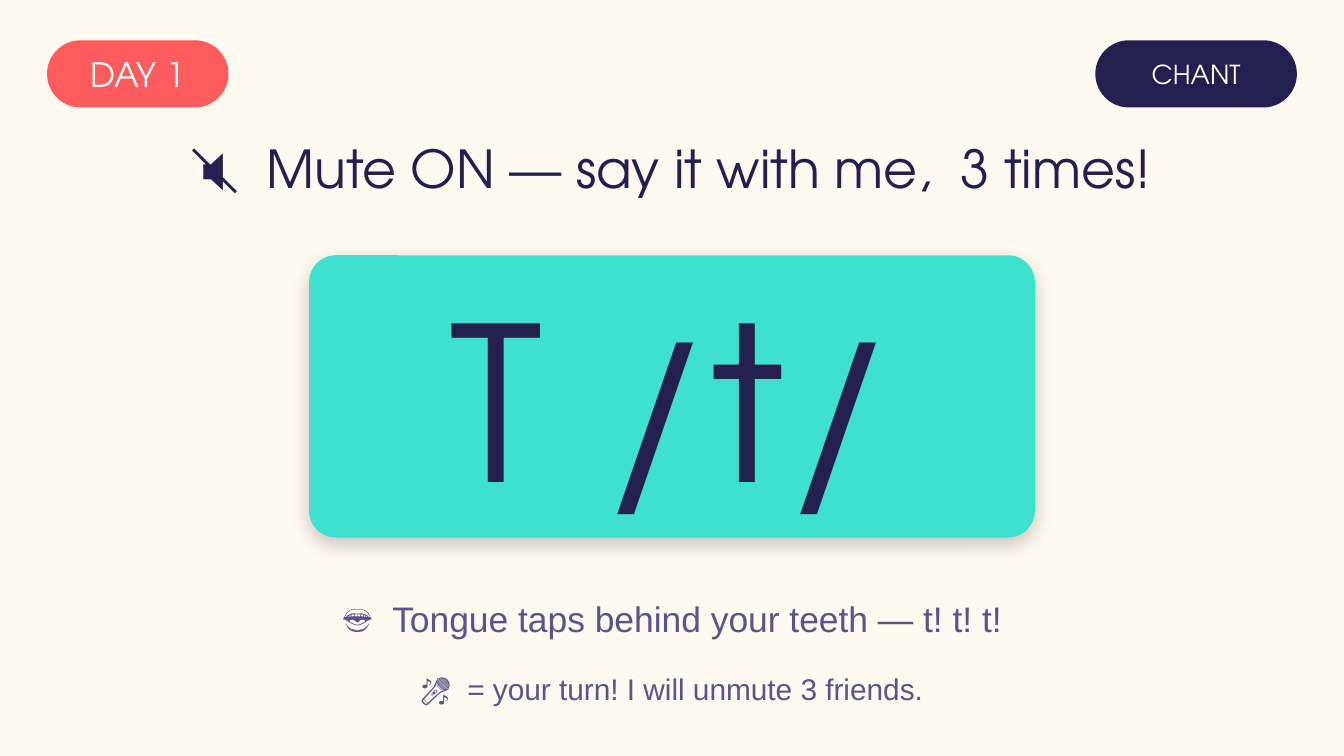
from lxml import etree
from pptx import Presentation
from pptx.dml.color import RGBColor
from pptx.enum import shapes, text
from pptx.oxml.ns import qn
from pptx.util import Inches, Pt

CREAM = RGBColor(0xFF, 0xF9, 0xEF)
CORAL = RGBColor(0xFF, 0x5D, 0x5D)
NAVY = RGBColor(0x24, 0x1F, 0x4E)
TEAL = RGBColor(0x3E, 0xE0, 0xCF)
VIOLET = RGBColor(0x5A, 0x54, 0x8A)
WHITE = RGBColor(0xFF, 0xFF, 0xFF)
DISPLAY, BODY = "TeX Gyre Adventor", "Arial"
SLIDE_W = 10
SLIDE_H = SLIDE_W * 9 / 16

# Content: wording, place (left, top, width, height), look
HEADING = ("🔇  Mute ON — say it with me,  3 times!", (0, 0.95, SLIDE_W, 0.6))
PANELS = [  # wording, place, corner, fill, text size, text colour
    ("DAY 1", (0.35, 0.3, 1.35, 0.5), 0.5, CORAL, 18, WHITE),
    ("CHANT", (8.15, 0.3, 1.5, 0.5), 0.5, NAVY, 14, WHITE),
    ("T /t/", (2.3, 1.9, 5.4, 2.1), 0.095, TEAL, 115, NAVY),
]
CUES = [  # wording, place, text size
    ("👄  Tongue taps behind your teeth — t! t! t!", (0, 4.35, SLIDE_W, 0.5), 19),
    ("🎤  = your turn! I will unmute 3 friends.", (0, 4.9, SLIDE_W, 0.45), 16),
]


def write(frame, wording, size, colour, face):
    """Put one centred line in a text frame."""
    frame.text = wording
    frame.word_wrap = True
    frame.auto_size = text.MSO_AUTO_SIZE.NONE
    frame.vertical_anchor = text.MSO_ANCHOR.MIDDLE
    line = frame.paragraphs[0]
    line.alignment = text.PP_ALIGN.CENTER
    line.runs[0].font.color.rgb = colour
    for key, value in {"size": Pt(size), "name": face}.items():
        setattr(line.runs[0].font, key, value)


def add_panel(slide, wording, place, corner, fill, size, colour):
    panel = slide.shapes.add_shape(
        shapes.MSO_SHAPE.ROUNDED_RECTANGLE, *map(Inches, place))
    panel.adjustments[0] = corner
    panel.shadow.inherit = False
    panel.fill.solid()
    panel.fill.fore_color.rgb = fill
    panel.line.fill.background()
    for side in ("left", "top", "right", "bottom"):
        setattr(panel.text_frame, f"margin_{side}", 0)
    write(panel.text_frame, wording, size, colour, DISPLAY)
    return panel


def add_soft_shadow(panel):
    """Black shadow at 20 %, falling straight down."""
    effects = panel.element.spPr.find(qn("a:effectLst"))
    shadow = etree.SubElement(
        effects, qn("a:outerShdw"), blurRad=str(Pt(10)), dist=str(Pt(4)),
        dir=str(90 * 60000), algn="ctr", rotWithShape="0")
    black = etree.SubElement(shadow, qn("a:srgbClr"), val="000000")
    etree.SubElement(black, qn("a:alpha"), val="20000")


prs = Presentation()
prs.slide_width, prs.slide_height = Inches(SLIDE_W), Inches(SLIDE_H)
slide = prs.slides.add_slide(prs.slide_layouts[5])
slide.background.fill.solid()
slide.background.fill.fore_color.rgb = CREAM

# Heading
wording, place = HEADING
heading = slide.shapes.title
for side, value in zip(("left", "top", "width", "height"), place):
    setattr(heading, side, Inches(value))
write(heading.text_frame, wording, 28, NAVY, DISPLAY)

# Day and activity pills, then the sound card
day, activity, sound_card = [add_panel(slide, *panel) for panel in PANELS]
add_soft_shadow(sound_card)

# Cues under the card
for wording, place, size in CUES:
    cue = slide.shapes.add_textbox(*map(Inches, place))
    write(cue.text_frame, wording, size, VIOLET, BODY)

prs.save("out.pptx")
